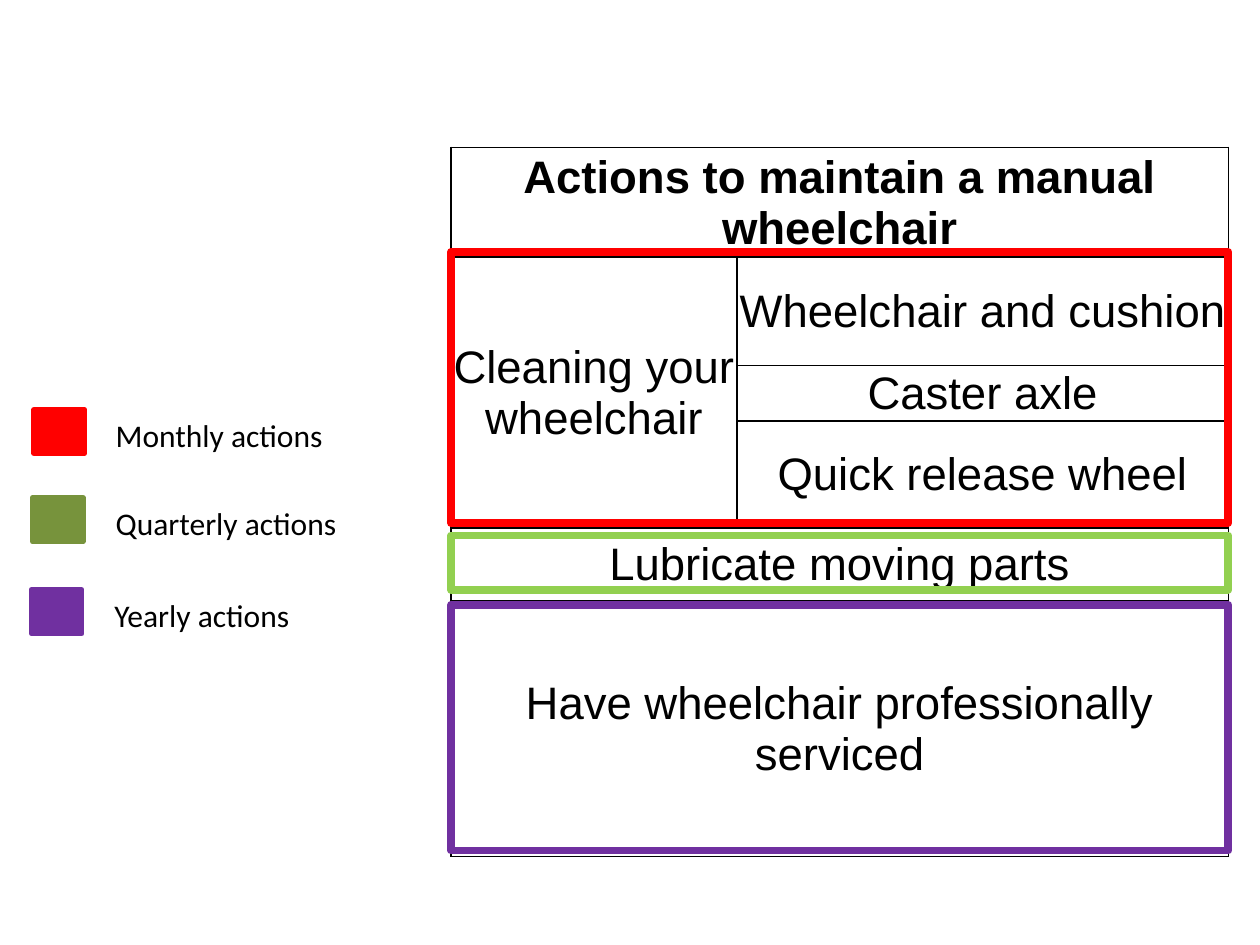
"""Build a slide of manual wheelchair maintenance actions grouped by frequency."""
from dataclasses import dataclass

from lxml import etree
from pptx import Presentation
from pptx.dml.color import RGBColor
from pptx.enum import shapes, text
from pptx.oxml import ns
from pptx.util import Inches, Pt

COLORS = {
    "ink": "000000",
    "monthly": "FF0000",
    "quarterly": "92D050",
    "quarterly_key": "77933C",
    "yearly": "7030A0",
}
TABLE_LEFT, TABLE_TOP = 3.58, 1.17
COLUMN_WIDTHS = (2.27, 3.9)
ROW_HEIGHTS = (0.87, 0.86, 0.44, 0.85, 0.58, 2.03)


@dataclass(frozen=True)
class Action:
    row: int
    column: int
    wording: str
    row_span: int = 1
    column_span: int = 1
    bold: bool = False


@dataclass(frozen=True)
class Frame:
    top: float
    height: float
    color: str


@dataclass(frozen=True)
class KeyEntry:
    left: float
    top: float
    label_left: float
    label_width: float
    wording: str
    color: str


ACTIONS = (
    Action(0, 0, "Actions to maintain a manual wheelchair", column_span=2, bold=True),
    Action(1, 0, "Cleaning your wheelchair", row_span=3),
    Action(1, 1, "Wheelchair and cushion"),
    Action(2, 1, "Caster axle"),
    Action(3, 1, "Quick release wheel"),
    Action(4, 0, "Lubricate moving parts", column_span=2),
    Action(5, 0, "Have wheelchair professionally serviced", column_span=2),
)
FRAMES = (
    Frame(2.0, 2.15, "monthly"),
    Frame(4.25, 0.43, "quarterly"),
    Frame(4.8, 1.95, "yearly"),
)
KEY = (
    KeyEntry(0.27, 3.25, 0.82, 1.86, "Monthly actions", "monthly"),
    KeyEntry(0.26, 3.95, 0.82, 1.97, "Quarterly actions", "quarterly_key"),
    KeyEntry(0.25, 4.68, 0.81, 1.61, "Yearly actions", "yearly"),
)


def rgb(name: str) -> RGBColor:
    return RGBColor.from_string(COLORS[name])


def add_run(paragraph, wording: str, font: str, size: float, bold: bool = False) -> None:
    run = paragraph.add_run()
    run.text = wording
    run.font.name = font
    run.font.size = Pt(size)
    run.font.bold = bold
    run.font.color.rgb = rgb("ink")


def border_cell(cell) -> None:
    properties = cell._tc.get_or_add_tcPr()
    for position, side in enumerate(("lnL", "lnR", "lnT", "lnB")):
        border = etree.Element(ns.qn(f"a:{side}"), w=str(Pt(1)))
        fill = etree.SubElement(border, ns.qn("a:solidFill"))
        etree.SubElement(fill, ns.qn("a:srgbClr"), val=COLORS["ink"])
        properties.insert(position, border)


def draw_actions(slide) -> None:
    table = slide.shapes.add_table(
        len(ROW_HEIGHTS), len(COLUMN_WIDTHS), Inches(TABLE_LEFT), Inches(TABLE_TOP),
        Inches(sum(COLUMN_WIDTHS)), Inches(sum(ROW_HEIGHTS)),
    ).table
    table.first_row = table.horz_banding = False
    for column, width in zip(table.columns, COLUMN_WIDTHS):
        column.width = Inches(width)
    for row, height in zip(table.rows, ROW_HEIGHTS):
        row.height = Inches(height)
    for cell in table.iter_cells():
        cell.fill.background()
        border_cell(cell)
        cell.margin_left = cell.margin_right = cell.margin_top = Inches(0.01)
        cell.margin_bottom = 0
        cell.vertical_anchor = text.MSO_ANCHOR.MIDDLE
    for action in ACTIONS:
        cell = table.cell(action.row, action.column)
        if action.row_span > 1 or action.column_span > 1:
            cell.merge(table.cell(action.row + action.row_span - 1,
                                  action.column + action.column_span - 1))
        paragraph = cell.text_frame.paragraphs[0]
        paragraph.alignment = text.PP_ALIGN.CENTER
        add_run(paragraph, action.wording, "Arial", 26, action.bold)


def add_rectangle(parent, left: float, top: float, width: float, height: float,
                  color: str, line_width: float, filled: bool) -> None:
    rectangle = parent.shapes.add_shape(
        shapes.MSO_SHAPE.RECTANGLE,
        Inches(left), Inches(top), Inches(width), Inches(height))
    rectangle.shadow.inherit = False
    rectangle.line.color.rgb = rgb(color)
    rectangle.line.width = Pt(line_width)
    if filled:
        rectangle.fill.solid()
        rectangle.fill.fore_color.rgb = rgb(color)
    else:
        rectangle.fill.background()


def draw_key_entry(slide, entry: KeyEntry) -> None:
    group = slide.shapes.add_group_shape()
    add_rectangle(group, entry.left, entry.top, 0.4, 0.35, entry.color, 3, True)
    label = group.shapes.add_textbox(
        Inches(entry.label_left), Inches(entry.top),
        Inches(entry.label_width), Inches(0.4)).text_frame
    label.word_wrap = False
    label.auto_size = text.MSO_AUTO_SIZE.SHAPE_TO_FIT_TEXT
    add_run(label.paragraphs[0], entry.wording, "Calibri", 18)


def main() -> None:
    deck = Presentation()
    deck.slide_width, deck.slide_height = Inches(10), Inches(7.5)
    slide = deck.slides.add_slide(deck.slide_layouts[6])
    draw_actions(slide)
    for frame in FRAMES:
        add_rectangle(slide, TABLE_LEFT, frame.top, sum(COLUMN_WIDTHS),
                      frame.height, frame.color, 4.5, False)
    for entry in KEY:
        draw_key_entry(slide, entry)
    deck.save("out.pptx")


if __name__ == "__main__":
    main()
